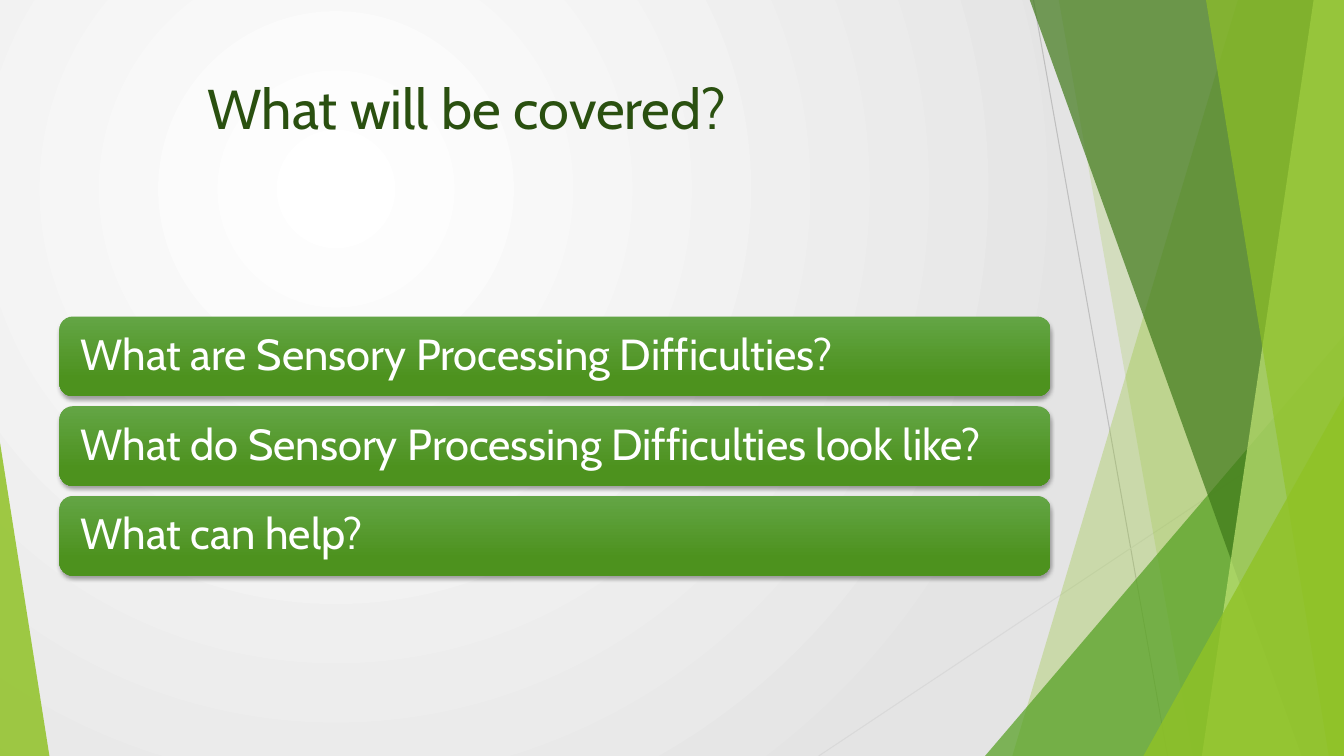
from lxml.etree import SubElement
from pptx import Presentation
from pptx.dml.color import RGBColor as RGB
from pptx.enum.shapes import MSO_CONNECTOR as LINK, MSO_SHAPE as SHAPE
from pptx.enum.text import MSO_ANCHOR as ANCHOR, PP_ALIGN as ALIGN
from pptx.oxml.ns import qn
from pptx.util import Inches, Pt

WIDE, HIGH, TOP = 13.33, 7.5, -0.01
FONT = "Cabin"
COLORS = {
    "white": "FFFFFF", "mist": "E4E4E4", "gray": "BFBFBF", "pale": "D9D9D9",
    "lime": "90C226", "leaf": "54A021", "moss": "3F7819", "light": "C0E474",
    "title": "2A5010", "bar top": "63A545", "bar end": "4D921E", "black": "000000",
}
TOPICS = [
    "What are Sensory Processing Difficulties?",
    "What do Sensory Processing Difficulties look like?",
    "What can help?",
]


def color(name):
    return RGB.from_string(COLORS[name])


def apply(item, form):
    for key, value in form.items():
        setattr(item, key, value)


def blend(fill, names, ends):
    fill.gradient()
    for stop, name, end in zip(fill.gradient_stops, names, ends):
        stop.color.rgb = color(name)
        stop.position = end


def tint(shape, name, alpha):
    """Fill a shape with a see-through colour and no outline."""
    shape.shadow.inherit = False
    shape.line.fill.background()
    shape.fill.solid()
    shape.fill.fore_color.rgb = color(name)
    hue = next(shape.element.spPr.iter(qn("a:srgbClr")))
    SubElement(hue, qn("a:alpha"), val=str(alpha * 1000))


def set_back(slide):
    """Radial glow centred a quarter of the way in."""
    blend(slide.background.fill, ("white", "mist"), (0, 1))
    lin = next(slide.element.iter(qn("a:lin")))
    grad = lin.getparent()
    grad.remove(lin)
    ring = SubElement(grad, qn("a:path"), path="circle")
    SubElement(ring, qn("a:fillToRect"), l="50000", t="50000", r="100000", b="100000")


def add_line(slide, ends, name):
    line = slide.shapes.add_connector(LINK.STRAIGHT, *map(Inches, ends))
    line.line.color.rgb = color(name)
    line.line.width = Pt(0.75)
    SubElement(line.element.spPr, qn("a:effectLst"))


def add_panel(slide, upper, lower, name, alpha):
    """Slanted left edge; the rest runs to the slide's right side."""
    pen = slide.shapes.build_freeform(Inches(upper), Inches(TOP))
    rest = [(WIDE, TOP), (WIDE, HIGH), (lower, HIGH)]
    pen.add_line_segments([(Inches(x), Inches(y)) for x, y in rest], close=True)
    tint(pen.convert_to_shape(), name, alpha)


def add_wedge(slide, left, top, width, peak, name, alpha):
    """Triangle standing on the slide's bottom edge."""
    box = map(Inches, (left, top, width, HIGH - top))
    wedge = slide.shapes.add_shape(SHAPE.ISOSCELES_TRIANGLE, *box)
    wedge.adjustments[0] = peak
    tint(wedge, name, alpha)


def write(shape, text, size, name, form):
    frame = shape.text_frame
    frame.text = text
    apply(frame, {"word_wrap": True, **form})
    para = frame.paragraphs[0]
    para.alignment = ALIGN.LEFT
    apply(para.runs[0].font, {"name": FONT, "size": Pt(size)})
    para.runs[0].font.color.rgb = color(name)
    return para


def add_bar(slide, top, text):
    box = map(Inches, (0.59, top, 9.83, 0.79))
    bar = slide.shapes.add_shape(SHAPE.ROUNDED_RECTANGLE, *box)
    blend(bar.fill, ("bar top", "bar end"), (0, 0.78))
    bar.fill.gradient_angle = 270
    bar.line.fill.background()
    # Soft shadow below the bar
    bar.shadow.inherit = False
    effect = bar.element.spPr.find(qn("a:effectLst"))
    shade = SubElement(effect, qn("a:outerShdw"), blurRad=str(Pt(3)),
                       dist=str(Pt(2)), dir="5400000", rotWithShape="0")
    hue = SubElement(shade, qn("a:srgbClr"), val=COLORS["black"])
    SubElement(hue, qn("a:alpha"), val="35000")
    pad = Inches(0.17)
    para = write(bar, text, 31, "white", {
        "vertical_anchor": ANCHOR.MIDDLE, "margin_left": pad, "margin_right": pad,
        "margin_top": pad, "margin_bottom": pad})
    para.line_spacing = 0.9


def add_title(slide, text):
    title = slide.shapes.title
    apply(title, {"left": Inches(1.96), "top": Inches(0.68),
                  "width": Inches(10.62), "height": Inches(1.4)})
    write(title, text, 40, "title", {"vertical_anchor": ANCHOR.TOP})


def main():
    deck = Presentation()
    apply(deck, {"slide_width": Inches(WIDE), "slide_height": Inches(HIGH)})
    slide = deck.slides.add_slide(deck.slide_layouts[5])
    set_back(slide)

    # Green facets on the right and in the left corner
    add_line(slide, (10.25, 0, 11.58, HIGH), "gray")
    add_line(slide, (WIDE, 4.03, 8.12, HIGH), "pale")
    add_panel(slide, 12.28, 10.04, "lime", 30)
    add_panel(slide, 10.5, 11.83, "lime", 20)
    add_wedge(slide, 9.77, 3.33, 3.56, 1, "leaf", 72)
    add_panel(slide, 10.21, 12.91, "moss", 70)
    add_panel(slide, 13.03, 11.92, "light", 70)
    add_panel(slide, 11.96, 13.18, "lime", 65)
    add_wedge(slide, 11.34, 3.93, 1.99, 1, "lime", 80)
    add_wedge(slide, 0, 4.39, 0.49, 0, "lime", 85)

    # Title and topic bars
    add_title(slide, "What will be covered?")
    for row, topic in enumerate(TOPICS):
        add_bar(slide, 3.14 + 0.89 * row, topic)
    deck.save("out.pptx")


if __name__ == "__main__":
    main()
